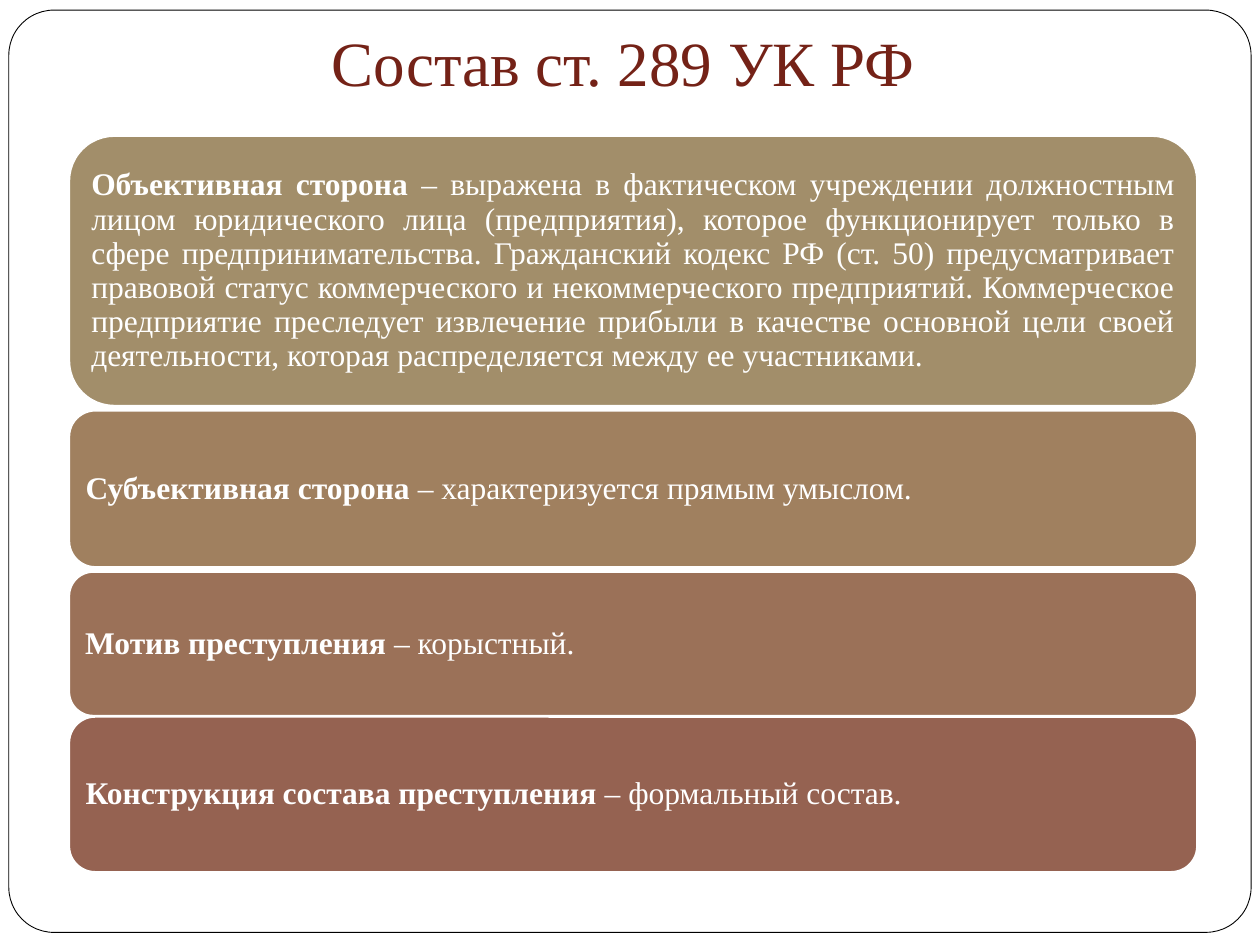
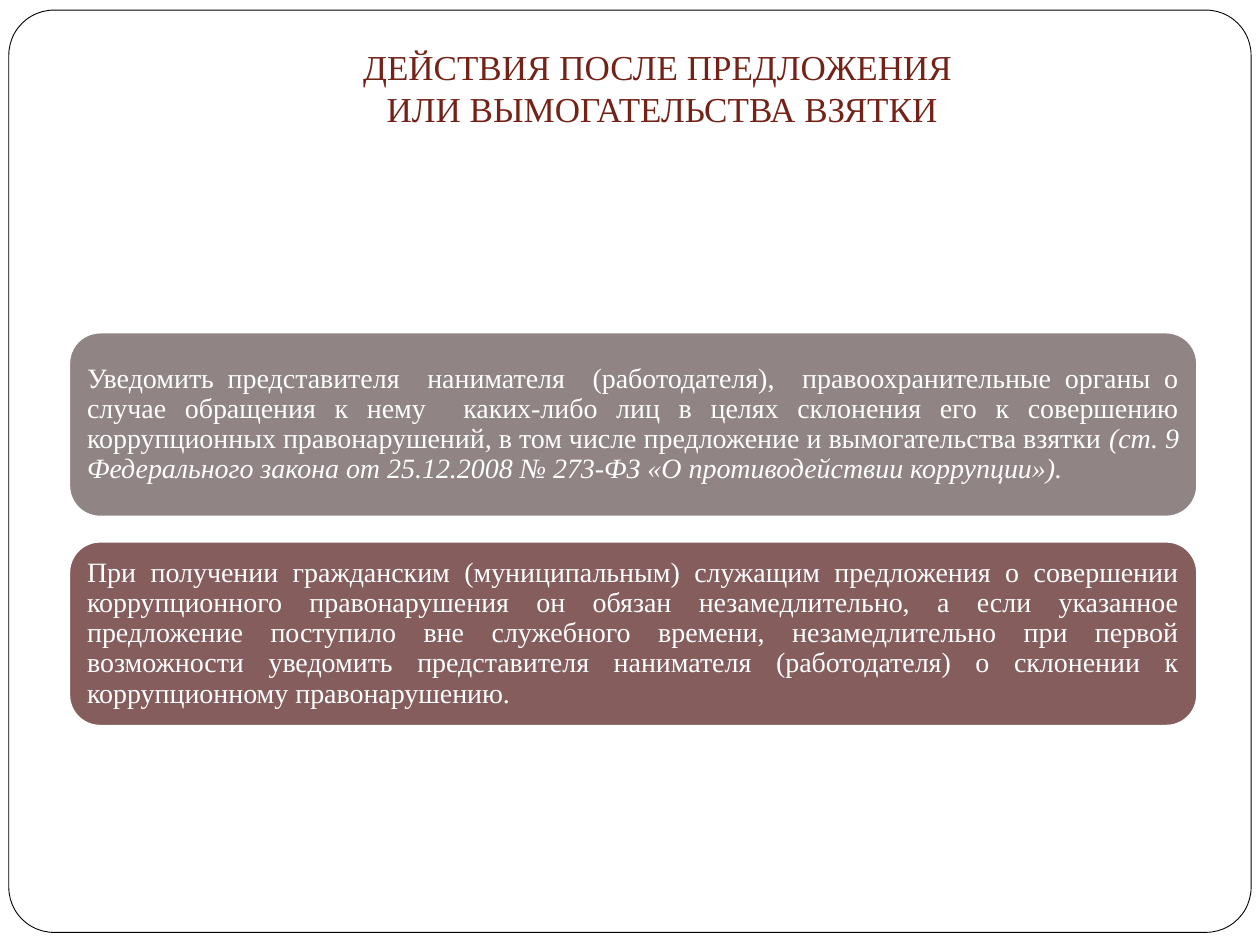
import pptx
import pptx.util
import pptx.dml.color
import pptx.enum.shapes
import pptx.enum.text

Inches = pptx.util.Inches
Align = pptx.enum.text.PP_ALIGN
Anchor = pptx.enum.text.MSO_ANCHOR

# Shared look
FONT = "Times New Roman"
WHITE = "FFFFFF"
BLACK = "000000"
TITLE_COLOR = "742217"
CARD_LEFT, CARD_WIDTH = 0.55, 8.95
CARD_INSETS = (0.07, 0.07, 0.07, 0.07)
TITLE_INSETS = (0.1, 0.05, 0.1, 0.1)

# Slide 1: fill, top, height, alignment, term, explanation
OFFENCE_ELEMENTS = [
    ("A28E6A", 1.08, 2.14, Align.JUSTIFY, "Объективная сторона ",
     "– выражена в фактическом учреждении должностным лицом юридического лица "
     "(предприятия), которое функционирует только в сфере предпринимательства. "
     "Гражданский кодекс РФ (ст. 50) предусматривает правовой статус коммерческого "
     "и некоммерческого предприятий. Коммерческое предприятие преследует извлечение "
     "прибыли в качестве основной цели своей деятельности, которая распределяется "
     "между ее участниками."),
    ("A0805F", 3.26, 1.24, Align.LEFT, "Субъективная сторона ",
     "– характеризуется прямым умыслом."),
    ("9B7158", 4.54, 1.14, Align.LEFT, "Мотив преступления ",
     "– корыстный."),
    ("956251", 5.69, 1.23, Align.LEFT, "Конструкция состава преступления ",
     "– формальный состав."),
]

# Slide 2: fill, main text, legal reference in italics
DUTIES = [
    ("918485",
     "Уведомить представителя  нанимателя  (работодателя),  правоохранительные "
     "органы о случае обращения к нему  каких-либо лиц в целях склонения его к "
     "совершению коррупционных правонарушений, в том числе предложение и "
     "вымогательства взятки ",
     "(ст. 9 Федерального закона от 25.12.2008 № 273-ФЗ "
     "«О противодействии коррупции»)."),
    ("855D5D",
     "При получении гражданским (муниципальным) служащим предложения о совершении "
     "коррупционного правонарушения он обязан незамедлительно, а если указанное "
     "предложение поступило вне служебного времени, незамедлительно при первой "
     "возможности уведомить представителя нанимателя (работодателя) о склонении к "
     "коррупционному правонарушению.",
     ""),
]
DUTY_TOP, DUTY_HEIGHT, DUTY_STEP = 2.64, 1.46, 1.66


def color(hex_code):
    return pptx.dml.color.RGBColor.from_string(hex_code)


def add_run(paragraph, text, size, hex_code, bold=False, italic=False):
    run = paragraph.add_run()
    run.text = text
    run.font.name = FONT
    run.font.size = pptx.util.Pt(size)
    run.font.color.rgb = color(hex_code)
    run.font.bold = bold
    run.font.italic = italic


def prepare_text(holder, insets, anchor, align):
    """Set up the text frame and return its first paragraph."""
    frame = holder.text_frame
    frame.word_wrap = True
    frame.vertical_anchor = anchor
    (frame.margin_left, frame.margin_top,
     frame.margin_right, frame.margin_bottom) = map(Inches, insets)
    paragraph = frame.paragraphs[0]
    paragraph.alignment = align
    return paragraph


def add_round_box(slide, left, top, width, height, fill, line, line_width):
    box = slide.shapes.add_shape(
        pptx.enum.shapes.MSO_SHAPE.ROUNDED_RECTANGLE,
        Inches(left), Inches(top), Inches(width), Inches(height))
    box.shadow.inherit = False
    box.fill.solid()
    box.fill.fore_color.rgb = color(fill)
    box.line.color.rgb = color(line)
    box.line.width = pptx.util.Pt(line_width)
    return box


def add_framed_slide(deck):
    slide = deck.slides.add_slide(deck.slide_layouts[6])
    border = add_round_box(slide, 0.07, 0.08, 9.86, 7.32, WHITE, BLACK, 0.5)
    border.adjustments[0] = 0.049
    return slide


def add_title(slide, left, top, height, size, lines):
    title = slide.shapes.add_textbox(
        Inches(left), Inches(top), Inches(CARD_WIDTH), Inches(height))
    paragraph = prepare_text(title, TITLE_INSETS, Anchor.BOTTOM, Align.CENTER)
    for number, line in enumerate(lines):
        if number:
            paragraph.add_line_break()
        add_run(paragraph, line, size, TITLE_COLOR)


def add_card(slide, top, height, fill, align):
    """Draw a filled card and return the paragraph for its text."""
    card = add_round_box(slide, CARD_LEFT, top, CARD_WIDTH, height, fill, WHITE, 1)
    paragraph = prepare_text(card, CARD_INSETS, Anchor.MIDDLE, align)
    paragraph.line_spacing = 0.9
    return paragraph


def build_offence_slide(deck):
    slide = add_framed_slide(deck)
    add_title(slide, 0.47, 0.23, 0.66, 36, ["Состав ст. 289 УК РФ"])
    for fill, top, height, align, term, explanation in OFFENCE_ELEMENTS:
        paragraph = add_card(slide, top, height, fill, align)
        add_run(paragraph, term, 18, WHITE, bold=True)
        add_run(paragraph, explanation, 18, WHITE)


def build_duties_slide(deck):
    slide = add_framed_slide(deck)
    add_title(slide, 0.78, 0.31, 0.82, 20,
              ["ДЕЙСТВИЯ ПОСЛЕ ПРЕДЛОЖЕНИЯ ", "ИЛИ ВЫМОГАТЕЛЬСТВА ВЗЯТКИ"])
    for number, (fill, duty, reference) in enumerate(DUTIES):
        top = DUTY_TOP + number * DUTY_STEP
        paragraph = add_card(slide, top, DUTY_HEIGHT, fill, Align.JUSTIFY)
        add_run(paragraph, duty, 16, WHITE)
        if reference:
            add_run(paragraph, reference, 16, WHITE, italic=True)


def main():
    deck = pptx.Presentation()
    deck.slide_width, deck.slide_height = Inches(10), Inches(7.5)
    build_offence_slide(deck)
    build_duties_slide(deck)
    deck.save("out.pptx")


if __name__ == "__main__":
    main()
